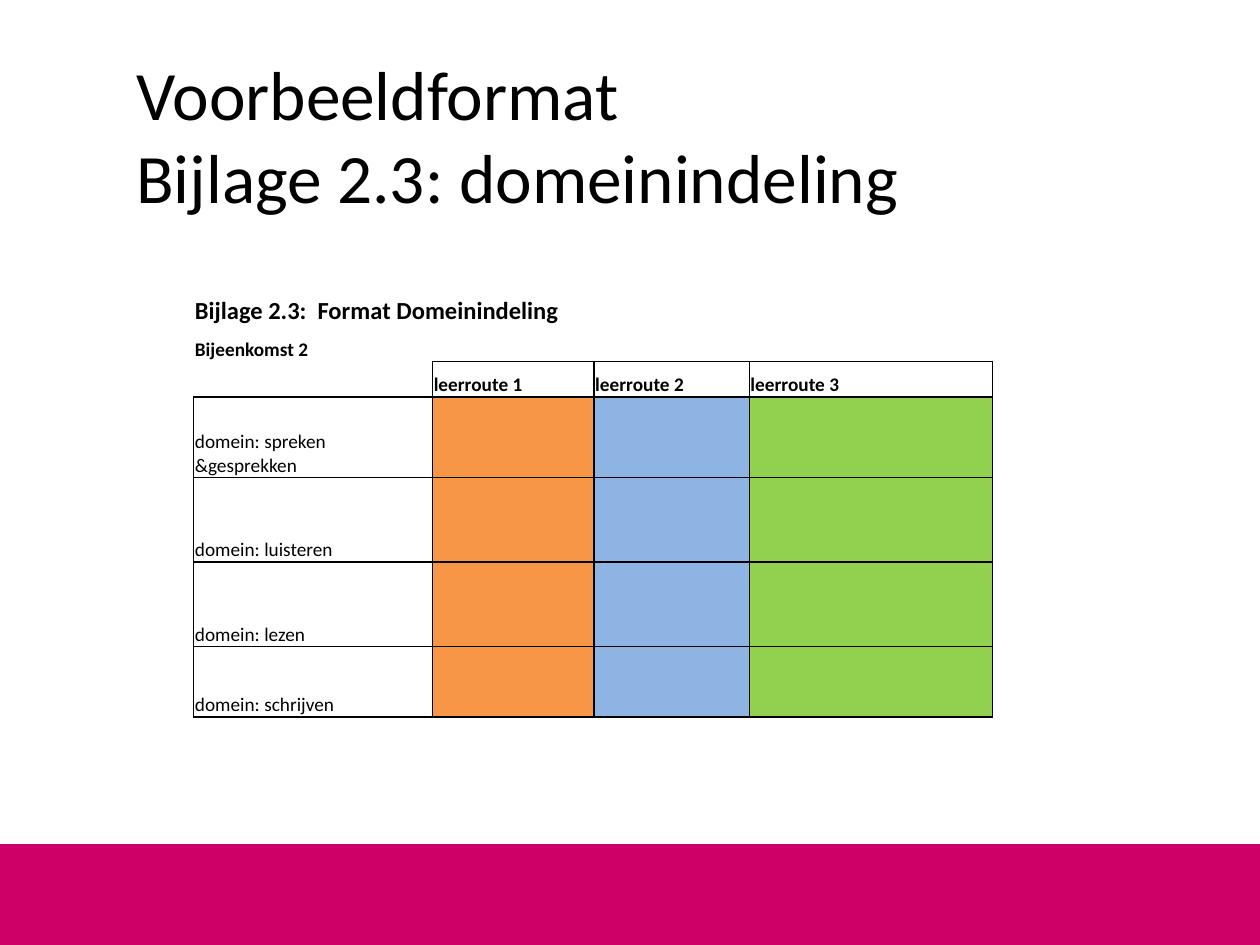
from lxml import etree
from pptx import Presentation
from pptx.dml.color import RGBColor
from pptx.enum.shapes import MSO_SHAPE
from pptx.enum.text import MSO_ANCHOR, MSO_AUTO_SIZE, PP_ALIGN
from pptx.oxml.ns import qn
from pptx.util import Pt

RECT = MSO_SHAPE.RECTANGLE
MIDDLE, BOTTOM = MSO_ANCHOR.MIDDLE, MSO_ANCHOR.BOTTOM
LEFT = PP_ALIGN.LEFT
NO_FIT = MSO_AUTO_SIZE.NONE
TITLE_ONLY = 5

COLORS = {
    "text": "000000",
    "bar": "CC0066",
    "leerroute 1": "F79646",
    "leerroute 2": "8DB4E2",
    "leerroute 3": "92D050",
}
FONT = "Calibri"
ROUTES = ["leerroute 1", "leerroute 2", "leerroute 3"]
DOMAINS = ["spreken &gesprekken", "luisteren", "lezen", "schrijven"]
COL_WIDTHS = [136.5, 92.25, 88.75, 139]
ROW_HEIGHTS = [24.5, 20.2, 20.2, 46.1, 48.2, 48.2, 40.3]
HEADER_ROW = 2


def rgb(name):
    return RGBColor.from_string(COLORS[name])


def write(tf, text, size, bold=False, anchor=BOTTOM):
    tf.vertical_anchor = anchor
    p = tf.paragraphs[0]
    p.alignment = LEFT
    if not text:
        etree.SubElement(p._p, qn("a:endParaRPr"), sz=str(size * 100))
        return
    for i, line in enumerate(text.split("\n")):
        if i:
            p.add_line_break()
        r = p.add_run()
        r.text = line
        r.font.name = FONT
        r.font.size = Pt(size)
        r.font.bold = bold
        r.font.color.rgb = rgb("text")


def add_bar(s):
    sp = s.shapes.add_shape(RECT, Pt(0), Pt(482.4), Pt(720), Pt(57.6))
    sp.shadow.inherit = False
    sp.fill.solid()
    sp.fill.fore_color.rgb = rgb("bar")
    sp.line.fill.background()


def add_title(s, text):
    sp = s.shapes.title
    sp.left, sp.top, sp.width, sp.height = Pt(70.6), Pt(31.7), Pt(576), Pt(90)
    tf = sp.text_frame
    tf.word_wrap = True
    tf.auto_size = NO_FIT
    write(tf, text, 39.6, anchor=MIDDLE)


def set_borders(cell, sides):
    tc_pr = cell._tc.get_or_add_tcPr()
    for side in "LRTB":
        ln = etree.SubElement(tc_pr, qn(f"a:ln{side}"), w=str(Pt(1)))
        if side in sides:
            fill = etree.SubElement(ln, qn("a:solidFill"))
            etree.SubElement(fill, qn("a:srgbClr"), val=COLORS["text"])
        else:
            etree.SubElement(ln, qn("a:noFill"))


def border_sides(row, col):
    if row > HEADER_ROW or (row == HEADER_ROW and col):
        return "LRTB"
    if row == HEADER_ROW:
        return "RB"
    return "B" if row == HEADER_ROW - 1 and col else ""


def format_cell(cell, row, col, text):
    cell.margin_left = cell.margin_right = cell.margin_top = Pt(0.7)
    cell.margin_bottom = Pt(0)
    cell.vertical_anchor = BOTTOM
    set_borders(cell, border_sides(row, col))
    if row > HEADER_ROW and col:
        cell.fill.solid()
        cell.fill.fore_color.rgb = rgb(ROUTES[col - 1])
    else:
        cell.fill.background()
    write(cell.text_frame, text, 14 if row == 0 else 11, bold=row <= HEADER_ROW)


def add_domain_table(s):
    rows = [
        ["Bijlage 2.3:  Format Domeinindeling", "", "", ""],
        ["Bijeenkomst 2", "", "", ""],
        ["", *ROUTES],
        *[[f"domein: {name}", "", "", ""] for name in DOMAINS],
    ]
    frame = s.shapes.add_table(len(rows), len(COL_WIDTHS), Pt(110.7), Pt(162),
                               Pt(sum(COL_WIDTHS)), Pt(sum(ROW_HEIGHTS)))
    table = frame.table
    table.first_row = False
    table.horz_banding = False
    for column, width in zip(table.columns, COL_WIDTHS):
        column.width = Pt(width)
    for row, height in zip(table.rows, ROW_HEIGHTS):
        row.height = Pt(height)
    for i, texts in enumerate(rows):
        for j, text in enumerate(texts):
            format_cell(table.cell(i, j), i, j, text)
    table.cell(0, 0).merge(table.cell(0, 2))


def main():
    prs = Presentation()
    prs.slide_width, prs.slide_height = Pt(720), Pt(540)
    s = prs.slides.add_slide(prs.slide_layouts[TITLE_ONLY])
    add_bar(s)
    add_title(s, "Voorbeeldformat \nBijlage 2.3: domeinindeling")
    add_domain_table(s)
    prs.save("out.pptx")


if __name__ == "__main__":
    main()
